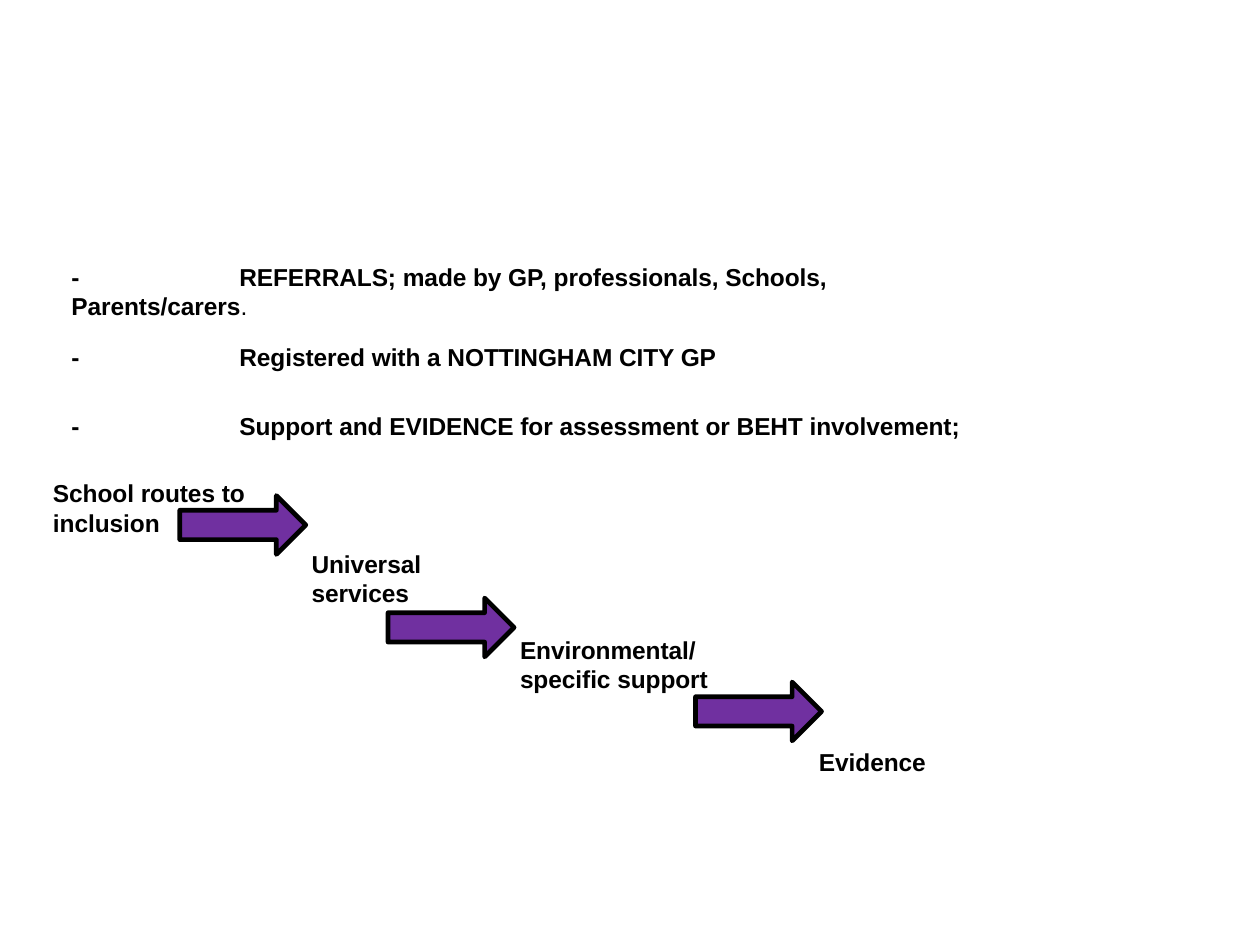
from lxml import etree
from pptx import Presentation
from pptx.dml.color import RGBColor
from pptx.enum.shapes import MSO_SHAPE
from pptx.oxml.ns import qn
from pptx.util import Inches, Pt

RIGHT_ARROW = MSO_SHAPE.RIGHT_ARROW
BLACK = RGBColor(0x00, 0x00, 0x00)
PURPLE = RGBColor(0x70, 0x30, 0xA0)


class SlideBuilder:
    """Holds the slide and the style shared by its elements."""

    font_name = "Arial"
    font_size = Pt(10.5)
    side_inset = Pt(5.4)
    edge_inset = Pt(2.7)
    tab_position = Inches(1)
    arrow_size = Inches(0.75), Inches(0.35)

    def __init__(self, slide):
        self.slide = slide

    def add_tab_stop(self, paragraph):
        properties = paragraph._p.get_or_add_pPr()
        tab_list = etree.SubElement(properties, qn("a:tabLst"))
        etree.SubElement(tab_list, qn("a:tab"),
                         pos=str(self.tab_position), algn="l")

    def text(self, left, top, width, height, text):
        """Add a bold text box and return its text frame."""
        shape = self.slide.shapes.add_textbox(
            Inches(left), Inches(top), Inches(width), Inches(height))
        frame = shape.text_frame
        frame.word_wrap = True
        frame.margin_left = frame.margin_right = self.side_inset
        frame.margin_top = frame.margin_bottom = self.edge_inset
        frame.text = text
        for paragraph in frame.paragraphs:
            if "\t" in paragraph.text:
                self.add_tab_stop(paragraph)
            font = paragraph.font
            font.name = self.font_name
            font.size = self.font_size
            font.bold = True
            font.color.rgb = BLACK
        return frame

    def arrow(self, left, top):
        shape = self.slide.shapes.add_shape(
            RIGHT_ARROW, Inches(left), Inches(top), *self.arrow_size)
        shape.shadow.inherit = False
        shape.fill.solid()
        shape.fill.fore_color.rgb = PURPLE
        shape.line.color.rgb = BLACK
        shape.line.width = Pt(2)


def main():
    presentation = Presentation()
    presentation.slide_width = Pt(540)
    presentation.slide_height = Pt(405)
    blank_layout = presentation.slide_layouts[6]
    builder = SlideBuilder(presentation.slides.add_slide(blank_layout))

    # Conditions for a referral
    referrals = builder.text(
        0.35, 1.52, 5.14, 0.43,
        "-\tREFERRALS; made by GP, professionals, Schools, Parents/carers")
    full_stop = referrals.paragraphs[0].add_run()
    full_stop.text = "."
    full_stop.font.bold = False
    builder.text(0.35, 2, 4.39, 0.25, "-\tRegistered with a NOTTINGHAM CITY GP")
    builder.text(0.35, 2.41, 5.89, 0.25,
                 "-\tSupport and EVIDENCE for assessment or BEHT involvement;")

    # Steps from school to evidence
    steps = [
        (0.24, 2.81, 1.31, 0.43, "School routes to inclusion"),
        (1.78, 3.23, 0.9, 0.43, "Universal\nservices"),
        (3.02, 3.74, 1.38, 0.43, "Environmental/ specific support"),
        (4.8, 4.41, 1.03, 0.25, "Evidence"),
    ]
    for step in steps:
        builder.text(*step)

    # Arrows between the steps
    for left, top in [(1.07, 2.95), (2.31, 3.56), (4.14, 4.06)]:
        builder.arrow(left, top)

    presentation.save("out.pptx")


if __name__ == "__main__":
    main()
